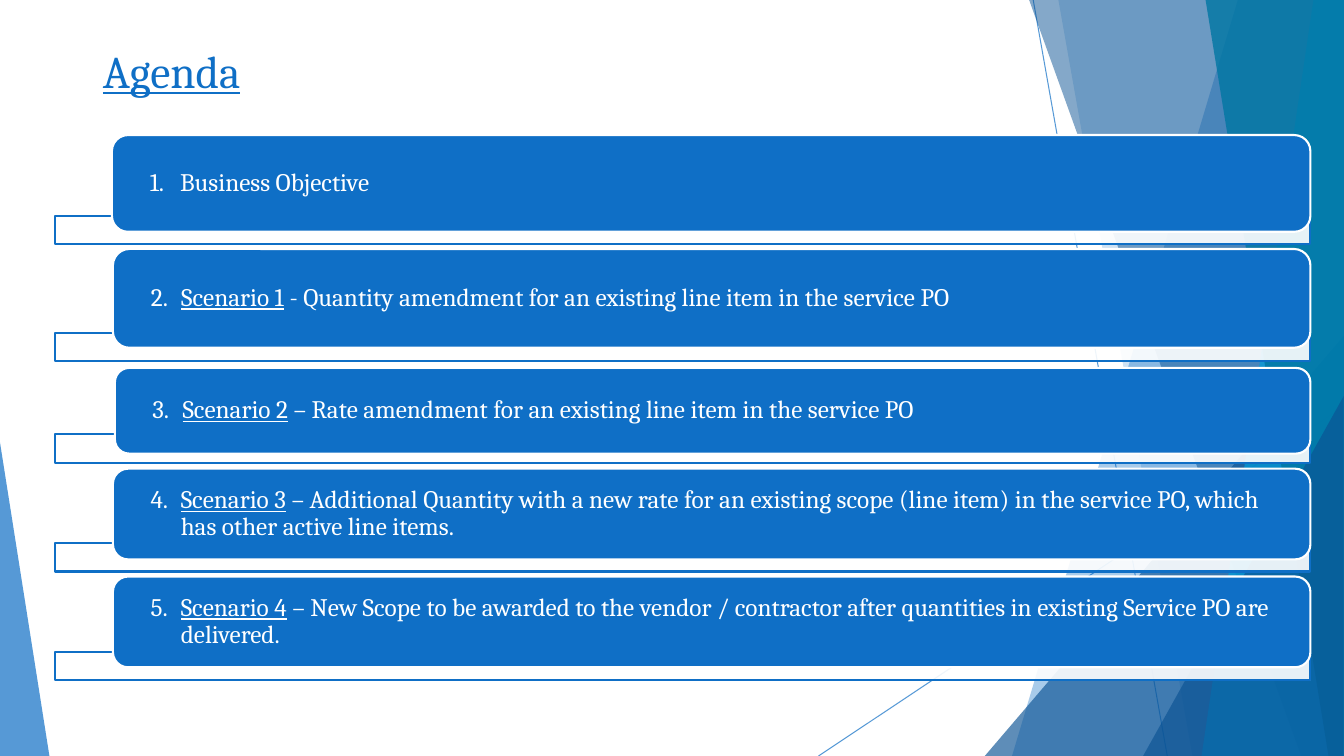
from lxml import etree
from pptx import Presentation
from pptx.dml.color import RGBColor
from pptx.enum.shapes import MSO_CONNECTOR as Connector, MSO_SHAPE as Shape
from pptx.enum.text import MSO_ANCHOR as Anchor, MSO_AUTO_SIZE as AutoSize, PP_ALIGN as Align
from pptx.oxml.ns import qn
from pptx.util import Inches, Pt

BLUE = RGBColor(0x0F, 0x6F, 0xC6)
DARK_BLUE = RGBColor(0x0B, 0x53, 0x94)
CYAN = RGBColor(0x00, 0x9D, 0xD9)
TEAL = RGBColor(0x00, 0x76, 0xA3)
WHITE = RGBColor(0xFF, 0xFF, 0xFF)

# Grid of square cells, ten to the inch
COLUMNS, ROWS = 133.33, 75
PANEL_RIGHT = 130

# Decorative bands on the right: outline points in columns and rows
BANDS = [
    ([(122.8, 0), (COLUMNS, 0), (COLUMNS, ROWS), (100.4, ROWS)], BLUE, 36),
    ([(105, 0), (COLUMNS, 0), (COLUMNS, ROWS), (118.3, ROWS)], BLUE, 20),
    ([(COLUMNS, 33.3), (COLUMNS, ROWS), (97.7, ROWS)], DARK_BLUE, 66),
    ([(102.1, 0), (COLUMNS, 0), (COLUMNS, ROWS), (129.1, ROWS)], DARK_BLUE, 50),
    ([(130.3, 0), (COLUMNS, 0), (COLUMNS, ROWS), (119.2, ROWS)], CYAN, 70),
    ([(119.6, 0), (COLUMNS, 0), (COLUMNS, ROWS), (131.8, ROWS)], TEAL, 80),
]
# Corner triangles: left, top, width, height, apex share, colour, opacity
CORNERS = [
    (113.4, 39.3, 19.9, 35.7, 1, DARK_BLUE, 66),
    (0, 43.9, 4.9, 31.1, 0, BLUE, 70),
]
# Agenda: panel left, top, height, bar top, underlined lead, text
AGENDA = [
    (11.1, 13.4, 9.6, 21.4, "", "Business Objective"),
    (11.2, 24.7, 9.8, 33, "Scenario 1",
     " - Quantity amendment for an existing line item in the service PO"),
    (11.4, 36.5, 8.5, 43.1, "Scenario 2",
     " – Rate amendment for an existing line item in the service PO"),
    (11.2, 46.5, 9, 53.9, "Scenario 3",
     " – Additional Quantity with a new rate for an existing scope (line item) "
     "in the service PO, which has other active line items."),
    (11.2, 57.2, 9, 64.7, "Scenario 4",
     " – New Scope to be awarded to the vendor / contractor after quantities "
     "in existing Service PO are delivered."),
]


def cells(*values):
    return [Inches(value / 10) for value in values]


def set_opacity(color_format_parent, percent):
    color = color_format_parent.find(".//" + qn("a:srgbClr"))
    etree.SubElement(color, qn("a:alpha"), val=str(percent * 1000))


def write(paragraph, text, size=18, color=WHITE, underline=False, name="Cambria"):
    run = paragraph.add_run()
    run.text = text
    font = run.font
    font.name, font.size, font.underline = name, Pt(size), underline
    font.color.rgb = color


class AgendaSlide:
    def __init__(self, presentation):
        self.slide = presentation.slides.add_slide(presentation.slide_layouts[5])
        self.shapes = self.slide.shapes

    def paint(self, shape, color, opacity=100, line=None):
        shape.shadow.inherit = False
        shape.fill.solid()
        shape.fill.fore_color.rgb = color
        if opacity < 100:
            set_opacity(shape._element.spPr.find(qn("a:solidFill")), opacity)
        if line is None:
            shape.line.fill.background()
        else:
            shape.line.color.rgb = line
            shape.line.width = Pt(1.5)
        return shape

    def thin_line(self, *ends):
        line = self.shapes.add_connector(Connector.STRAIGHT, *cells(*ends))
        line.line.color.rgb = BLUE
        line.line.width = Pt(0.75)
        properties = line._element.spPr
        set_opacity(properties.find(qn("a:ln")), 70)
        etree.SubElement(properties, qn("a:effectLst"))

    def band(self, points, color, opacity):
        start, *others = [cells(*point) for point in points]
        builder = self.shapes.build_freeform(*start)
        builder.add_line_segments(others, close=True)
        self.paint(builder.convert_to_shape(), color, opacity)

    def corner(self, left, top, width, height, apex, color, opacity):
        triangle = self.shapes.add_shape(
            Shape.ISOSCELES_TRIANGLE, *cells(left, top, width, height))
        triangle.adjustments[0] = apex
        self.paint(triangle, color, opacity)

    def title(self, text):
        title = self.shapes.title
        title.left, title.top, title.width, title.height = cells(9.2, 4, 115, 5.1)
        self.shapes._spTree.append(title._element)  # in front of the bands
        frame = title.text_frame
        frame.auto_size = AutoSize.NONE
        frame.vertical_anchor = Anchor.TOP
        frame.margin_top = Inches(0.03)
        paragraph = frame.paragraphs[0]
        paragraph.alignment = Align.LEFT
        write(paragraph, text, size=32.4, color=BLUE, underline=True)

    def bar(self, top):
        bar = self.shapes.add_shape(
            Shape.RECTANGLE, *cells(5.5, top, PANEL_RIGHT - 5.5, 2.8))
        self.paint(bar, WHITE, 90, line=BLUE)

    def panel(self, number, left, top, height, lead, text):
        panel = self.shapes.add_shape(
            Shape.ROUNDED_RECTANGLE, *cells(left, top, PANEL_RIGHT - left, height))
        self.paint(panel, BLUE, line=WHITE)
        frame = panel.text_frame
        frame.word_wrap = True
        frame.vertical_anchor = Anchor.MIDDLE
        frame.margin_left = frame.margin_right = Inches(0.33)
        frame.margin_top = frame.margin_bottom = 0
        paragraph = frame.paragraphs[0]
        paragraph.alignment = Align.LEFT
        paragraph.line_spacing = 0.9
        self.number(paragraph, number)
        if lead:
            write(paragraph, lead, underline=True)
        write(paragraph, text)

    def number(self, paragraph, number):
        properties = paragraph._p.get_or_add_pPr()
        properties.set("marL", str(Inches(0.3)))
        properties.set("indent", str(-Inches(0.3)))
        color = etree.SubElement(properties, qn("a:buClr"))
        etree.SubElement(color, qn("a:srgbClr"), val=str(WHITE))
        etree.SubElement(properties, qn("a:buFont"), typeface="Cambria")
        etree.SubElement(properties, qn("a:buAutoNum"),
                         type="arabicPeriod", startAt=str(number))


def main():
    presentation = Presentation()
    presentation.slide_width, presentation.slide_height = cells(COLUMNS, ROWS)
    agenda = AgendaSlide(presentation)

    # Background decoration
    agenda.thin_line(102.5, 0, 115.8, ROWS)
    agenda.thin_line(COLUMNS, 40.3, 81.2, ROWS)
    for band in BANDS:
        agenda.band(*band)
    for corner in CORNERS:
        agenda.corner(*corner)

    # Title and numbered agenda
    agenda.title("Agenda")
    for number, (left, top, height, bar_top, lead, text) in enumerate(AGENDA, 1):
        agenda.bar(bar_top)
        agenda.panel(number, left, top, height, lead, text)

    presentation.save("out.pptx")


if __name__ == "__main__":
    main()
